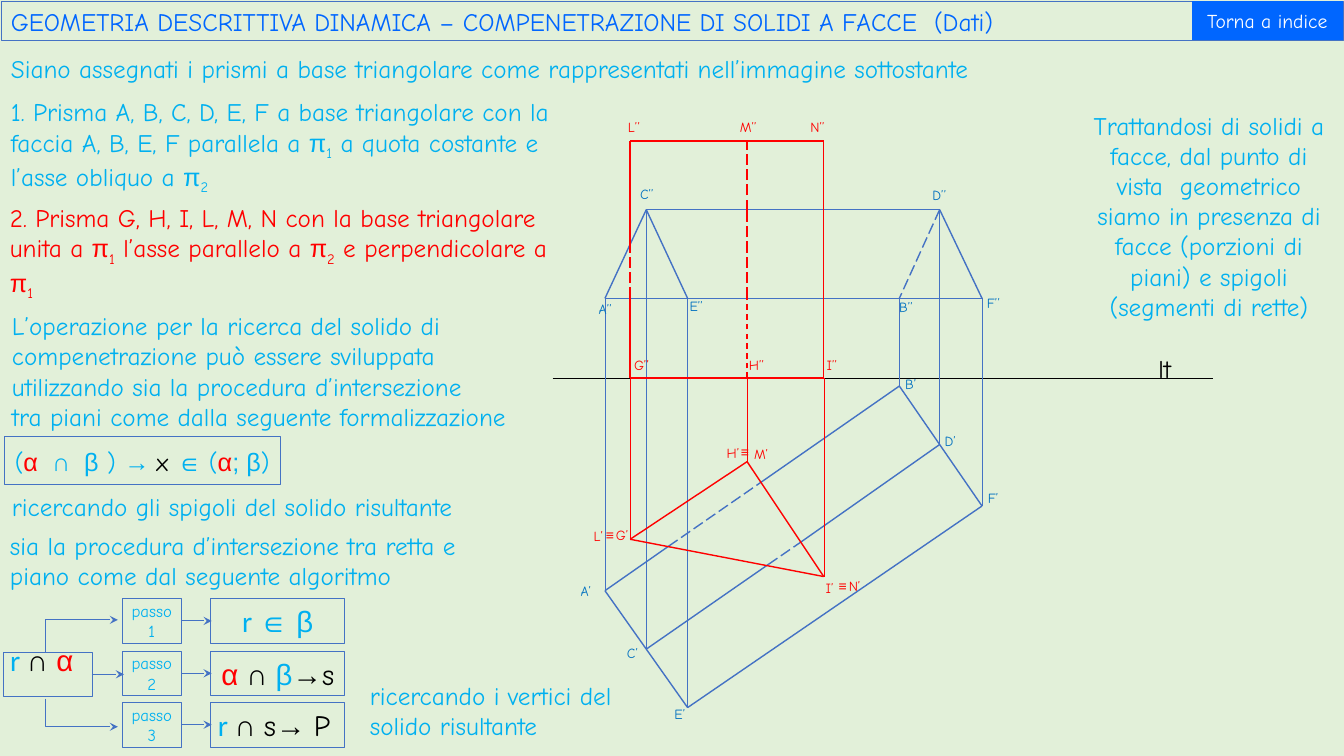
"""Build a descriptive geometry slide on two intersecting triangular prisms."""
from lxml.etree import SubElement
from pptx import Presentation
from pptx.dml.color import RGBColor
from pptx.enum.dml import MSO_LINE
from pptx.enum.shapes import MSO_CONNECTOR, MSO_SHAPE
from pptx.enum.text import MSO_ANCHOR, MSO_AUTO_SIZE, PP_ALIGN
from pptx.oxml.ns import qn
from pptx.util import Inches, Pt

COLOURS = {
    "mint": "E2F0D9", "edge": "4472C4", "title": "0066FF", "sky": "00B0F0",
    "label": "0070C0", "red": "FF0000", "black": "000000", "white": "FFFFFF",
}
COMIC, ARIAL, CALIBRI, SUB = "Comic Neue", "Arial", "Calibri", "sub"
LEFT, CENTER = PP_ALIGN.LEFT, PP_ALIGN.CENTER
LONG, DASH = MSO_LINE.LONG_DASH, MSO_LINE.DASH
GROUND = 3.75

PARAGRAPHS = [
    ((10.7, 1.04, 2.58, 2.22), CENTER, [[("Trattandosi di solidi a facce, dal punto di vista  geometrico siamo in presenza di facce (porzioni di piani) e spigoli (segmenti di rette)", "sky", COMIC)]]),
    ((0.01, 0.48, 13.31, 0.39), LEFT, [[("Siano assegnati i prismi a base triangolare come rappresentati nell’immagine sottostante", "sky", COMIC)]]),
    ((0.01, 0.91, 5.74, 1.01), LEFT, [[
        ("1. Prisma A, B, C, D, E, F a base triangolare con la faccia A, B, E, F parallela a ", "sky", COMIC),
        ("π", "sky", ARIAL), ("1", "sky", SUB),
        (" a quota costante e l’asse obliquo a ", "sky", COMIC),
        ("π", "sky", ARIAL), ("2", "sky", SUB)]]),
    ((0, 1.96, 5.74, 1.01), LEFT, [[
        ("2. Prisma G, H, I, L, M, N con la base triangolare unita a ", "red", COMIC),
        ("π", "red", ARIAL), ("1", "red", SUB),
        (" l’asse parallelo a ", "red", COMIC), ("π", "red", ARIAL), ("2", "red", SUB),
        (" e perpendicolare a ", "red", COMIC), ("π", "red", ARIAL), ("1", "red", SUB)]]),
    ((0.02, 3.03, 5.52, 2.22), LEFT, [
        [("L’operazione per la ricerca del solido di compenetrazione può essere sviluppata utilizzando sia la procedura d’intersezione", "sky", COMIC)],
        [("tra piani come dalla seguente formalizzazione", "sky", COMIC)],
        [("ricercando gli spigoli del solido risultante", "sky", COMIC)]]),
    ((0, 5.21, 4.99, 0.71), LEFT, [[("sia la procedura d’intersezione tra retta e piano come dal seguente algoritmo", "sky", COMIC)]]),
    ((3.57, 6.7, 2.62, 0.71), LEFT, [[("ricercando i vertici del solido risultante", "sky", COMIC)]]),
    ((11.39, 3.46, 0.39, 0.4), LEFT, [[("lt", "black", COMIC)]]),
]
TITLE = [("GEOMETRIA DESCRITTIVA DINAMICA – COMPENETRAZIONE DI SOLIDI A FACCE  (Dati)", "title", COMIC)]
BUTTON = [("Torna a indice", "white", COMIC)]
FORMULA = [
    ("(", "sky", COMIC), ("α  ", "red", ARIAL), ("∩  β", "sky", ARIAL),
    (" ) ", "sky", COMIC), ("→ ", "sky", ARIAL), ("x ", "black", COMIC),
    ("∈ ", "sky", ARIAL), ("(", "sky", COMIC), ("α", "red", ARIAL),
    ("; β", "sky", ARIAL), (")", "sky", COMIC),
]
START = [("r ", "sky", CALIBRI), ("∩ ", "black", ARIAL), ("α", "red", ARIAL)]
STEPS = [
    (5.94, CENTER, [("r ", "sky", CALIBRI), ("∈ β", "sky", ARIAL)]),
    (6.46, CENTER, [("α", "red", ARIAL), (" ∩ ", "black", ARIAL), ("β", "sky", ARIAL),
                    ("→", "black", ARIAL), ("s", "black", COMIC)]),
    (6.97, LEFT, [("r ", "sky", CALIBRI), ("∩ ", "black", ARIAL), ("s", "black", COMIC),
                  ("→ ", "black", ARIAL), ("P", "black", COMIC)]),
]

PLAN = {
    "A": (6, 5.86), "B": (8.92, 3.83), "C": (6.41, 6.44), "D": (9.32, 4.41),
    "E": (6.82, 7.02), "F": (9.74, 5.02),
    "G": (6.25, 5.35), "H": (7.41, 4.58), "I": (8.17, 5.72),
}
ELEVATION = {"A": 2.96, "B": 2.96, "C": 2.08, "D": 2.08, "E": 2.96, "F": 2.96,
             "G": GROUND, "H": GROUND, "I": GROUND, "L": 1.4, "M": 1.4, "N": 1.4}
ABOVE = {"L": "G", "M": "H", "N": "I"}
POINTS = {name + "’": place for name, place in PLAN.items()}
POINTS.update({name + "’’": (PLAN[ABOVE.get(name, name)][0], height)
               for name, height in ELEVATION.items()})
POINTS.update({
    "AB in": (6.63, 5.42), "AB out": (7.54, 4.79), "CD in": (7.62, 5.6), "CD out": (7.94, 5.38),
    "L low": (6.25, 2.45), "G top": (6.25, 2.96), "M low": (7.41, 2.09), "H top": (7.41, 2.96),
})
EDGES = [
    ("edge", 1, None, "A’ AB in, AB out B’, A’ E’, B’ F’, C’ CD in, CD out D’, E’ F’, "
     "C’’ D’’, D’’ F’’, C’’ E’’, C’’ A’’, A’’ F’’"),
    ("edge", 1, LONG, "D’’ B’’, AB in AB out, CD in CD out"),
    ("edge", 0.25, None, "A’ A’’, B’ B’’, C’ C’’, D’ D’’, E’ E’’, F’ F’’"),
    ("red", 1, None, "G’’ I’’, G’ I’, G’ H’, H’ I’, I’’ N’’, G’’ G top, L’’ N’’, L low L’’"),
    ("red", 1, LONG, "M low M’’, H top M low, G top L low"),
    ("red", 1, DASH, "H’’ H top"),
    ("red", 0.25, None, "G’’ G’, H’’ H’, I’’ I’"),
]
LABELS = {
    "label": [
        ("E’", 6.59, 6.95, 0.39), ("C’", 6.12, 6.34, 0.39), ("A’", 5.66, 5.73, 0.39),
        ("B’", 8.88, 3.68, 0.39), ("D’", 9.27, 4.24, 0.39), ("F’", 9.7, 4.81, 0.39),
        ("E’’", 6.74, 2.9, 0.39), ("C’’", 6.25, 1.79, 0.39), ("A’’", 5.84, 2.93, 0.43),
        ("B’’", 8.82, 2.91, 0.39), ("D’’", 9.15, 1.8, 0.43), ("F’’", 9.69, 2.87, 0.39)],
    "red": [
        ("G’’", 6.19, 3.49, 0.43), ("I’’", 8.1, 3.49, 0.39), ("H’’", 7.33, 3.49, 0.43),
        ("N’’", 7.94, 1.13, 0.43), ("M’’", 7.24, 1.13, 0.47), ("L’’", 6.13, 1.13, 0.39),
        ("I’", 8.09, 5.7, 0.39), ("H’", 7.11, 4.36, 0.33), ("G’", 6.01, 5.17, 0.39),
        ("N’", 8.32, 5.68, 0.39), ("M’", 7.38, 4.37, 0.38), ("L’", 5.79, 5.18, 0.39),
        ("≡", 7.25, 4.35, 0.31), ("≡", 5.91, 5.17, 0.28), ("≡", 8.22, 5.68, 0.31)],
}
FRAME = {"word_wrap": True, "vertical_anchor": MSO_ANCHOR.TOP}
GROWING = {**FRAME, "auto_size": MSO_AUTO_SIZE.SHAPE_TO_FIT_TEXT}
MIDDLE = {**FRAME, "vertical_anchor": MSO_ANCHOR.MIDDLE}
SNUG = {**MIDDLE, "margin_left": Inches(0.07), "margin_right": Inches(0.07),
        "margin_top": Inches(0.04), "margin_bottom": Inches(0.04)}
RAISED = {**SNUG, "margin_bottom": Inches(0.32)}


def colour(name):
    return RGBColor.from_string(COLOURS[name])


def assign(target, values):
    for name, value in values.items():
        setattr(target, name, value)


def write(box, paragraphs, size, frame, **layout):
    assign(box.text_frame, frame)
    for index, spans in enumerate(paragraphs):
        para = box.text_frame.add_paragraph() if index else box.text_frame.paragraphs[0]
        assign(para, layout)
        for text, tint, face in spans:
            span = para.add_run()
            span.text = text
            assign(span.font, {"size": Pt(size), "name": COMIC if face == SUB else face})
            span.font.color.rgb = colour(tint)
            if face == SUB:
                span.font._element.set("baseline", "-25000")
    return para


def text_box(page, place, paragraphs, size, frame=GROWING, **layout):
    box = page.shapes.add_textbox(*map(Inches, place))
    return write(box, paragraphs, size, frame, **layout)


def panel(page, place, spans, size, frame, width=0.5, fill=None, kind=MSO_SHAPE.RECTANGLE, **layout):
    box = page.shapes.add_shape(kind, *map(Inches, place))
    box.shadow.inherit = False
    if fill:
        box.fill.solid()
        box.fill.fore_color.rgb = colour(fill)
        box.line.fill.background()
    else:
        box.fill.background()
        box.line.color.rgb = colour("edge")
        box.line.width = Pt(width)
    write(box, [spans], size, frame, **layout)


def connect(page, start, end, tint, width, dash=None, arrow=False, bent=False):
    kind = MSO_CONNECTOR.ELBOW if bent else MSO_CONNECTOR.STRAIGHT
    line = page.shapes.add_connector(kind, *map(Inches, (*start, *end)))
    assign(line.line, {"width": Pt(width), "dash_style": dash})
    line.line.color.rgb = colour(tint)
    properties = line._element.spPr
    SubElement(properties, qn("a:effectLst"))
    if arrow:
        SubElement(properties.find(qn("a:ln")), qn("a:tailEnd"), type="stealth")
    if bent:
        guides = properties.find(qn("a:prstGeom")).find(qn("a:avLst"))
        SubElement(guides, qn("a:gd"), name="adj1", fmla="val 0")


def draw_prisms(page):
    connect(page, (5.48, GROUND), (12.03, GROUND), "black", 0.25)
    for tint, width, dash, pairs in EDGES:
        for pair in pairs.split(", "):
            start = next(name for name in POINTS if pair.startswith(name + " "))
            end = pair[len(start) + 1:]
            connect(page, POINTS[start], POINTS[end], tint, width, dash)
    for tint, labels in LABELS.items():
        for text, left, top, width in labels:
            face = ARIAL if text == "≡" else COMIC
            text_box(page, (left, top, width, 0.27), [[(text, tint, face)]], 10)


def draw_algorithm(page):
    panel(page, (0.03, 6.47, 0.89, 0.44), START, 21, RAISED, alignment=LEFT)
    for number, (top, align, spans) in enumerate(STEPS, 1):
        middle = top + 0.22
        panel(page, (2.09, top, 1.33, 0.44), spans, 21, SNUG, alignment=align)
        panel(page, (1.21, top, 0.59, 0.44), [(f"passo {number}", "sky", COMIC)], 12, SNUG, alignment=CENTER)
        connect(page, (1.81, middle), (2.1, middle), "edge", 0.75, arrow=True)
    for start, end, bent in (((0.45, 6.47), (1.17, 6.15), True), ((0.91, 6.69), (1.23, 6.69), False),
                             ((0.45, 6.93), (1.17, 7.21), True)):
        connect(page, start, end, "edge", 0.75, arrow=True, bent=bent)


def main():
    deck = Presentation()
    assign(deck, {"slide_width": Inches(13.33), "slide_height": Inches(7.5)})
    page = deck.slides.add_slide(deck.slide_layouts[6])
    page.background.fill.solid()
    page.background.fill.fore_color.rgb = colour("mint")
    panel(page, (0.01, 0.01, 13.31, 0.39), TITLE, 18, GROWING, 0.25, alignment=LEFT)
    for place, align, paragraphs in PARAGRAPHS:
        last = text_box(page, place, paragraphs, 18, alignment=align)
        if len(paragraphs) > 1:
            last.space_before = Pt(43)
    panel(page, (0.04, 4.33, 2.74, 0.47), FORMULA, 18, FRAME, 0.25,
          alignment=CENTER, line_spacing=1.15, space_after=Pt(10))
    draw_prisms(page)
    draw_algorithm(page)
    panel(page, (11.82, 0.01, 1.5, 0.39), BUTTON, 14, MIDDLE, fill="title",
          kind=MSO_SHAPE.ACTION_BUTTON_CUSTOM, alignment=CENTER)
    deck.save("out.pptx")


if __name__ == "__main__":
    main()
